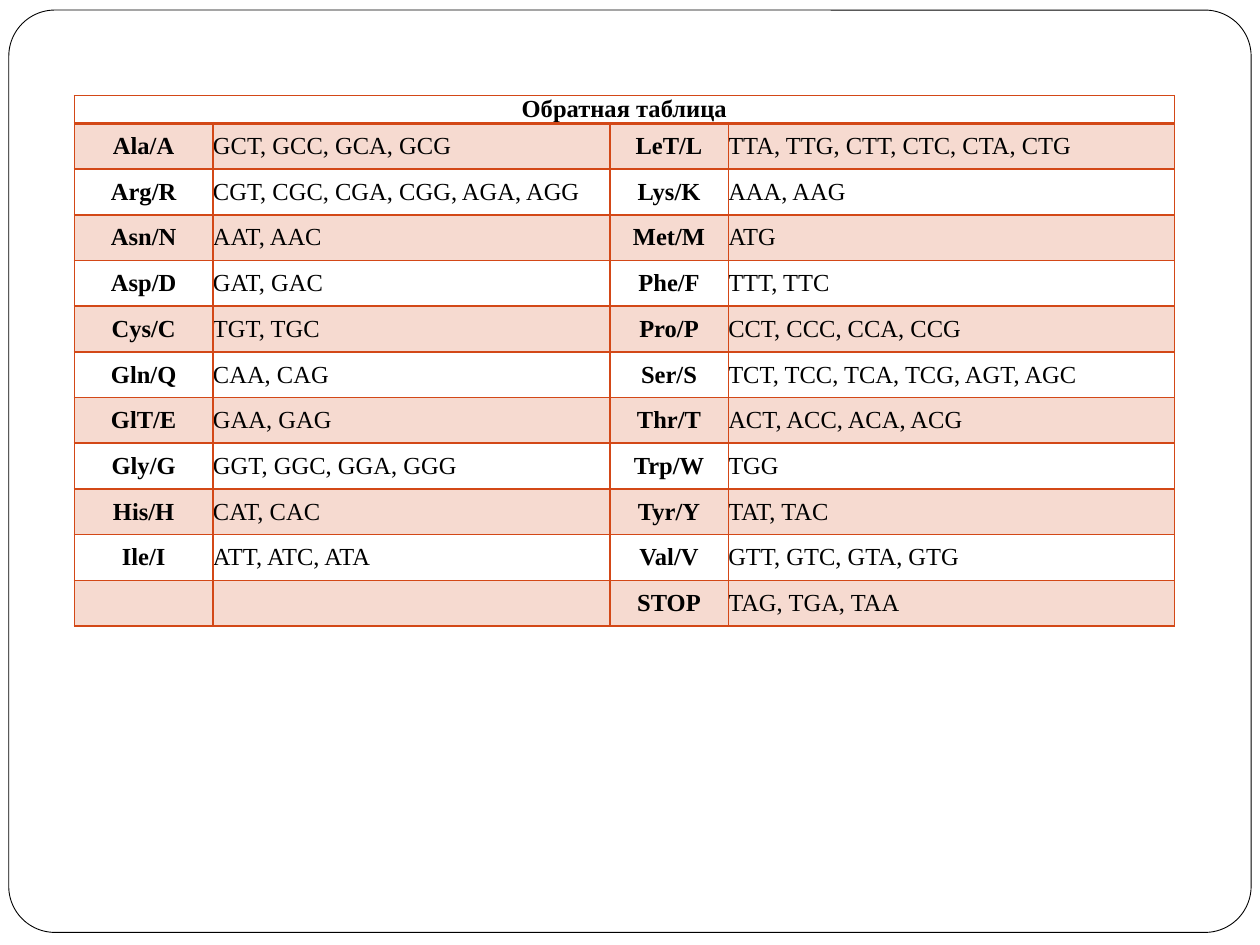
from dataclasses import dataclass

import pptx
import pptx.dml.color
import pptx.enum.shapes
import pptx.enum.text
import pptx.oxml
import pptx.oxml.ns
import pptx.util
from pptx.util import Inches, Pt

COLORS = {"paper": "FFFFFF", "ink": "000000", "accent": "D34817"}
FONT = "Times New Roman"
BAND_OPACITY = 20
COLUMN_WIDTHS = (1.1, 3.15, 0.94, 3.54)
TABLE_LEFT, TABLE_TOP = 0.59, 0.76
HEADER_HEIGHT, BODY_HEIGHT = 0.22, 3.99
TITLE = "Обратная таблица"


@dataclass(frozen=True)
class AminoAcid:
    name: str
    codons: str


LEFT_ACIDS = (
    AminoAcid("Ala/A", "GCT, GCC, GCA, GCG"),
    AminoAcid("Arg/R", "CGT, CGC, CGA, CGG, AGA, AGG"),
    AminoAcid("Asn/N", "AAT, AAC"),
    AminoAcid("Asp/D", "GAT, GAC"),
    AminoAcid("Cys/C", "TGT, TGC"),
    AminoAcid("Gln/Q", "CAA, CAG"),
    AminoAcid("GlT/E", "GAA, GAG"),
    AminoAcid("Gly/G", "GGT, GGC, GGA, GGG"),
    AminoAcid("His/H", "CAT, CAC"),
    AminoAcid("Ile/I", "ATT, ATC, ATA"),
    AminoAcid("", ""),
)
RIGHT_ACIDS = (
    AminoAcid("LeT/L", "TTA, TTG, CTT, CTC, CTA, CTG"),
    AminoAcid("Lys/K", "AAA, AAG"),
    AminoAcid("Met/M", "ATG"),
    AminoAcid("Phe/F", "TTT, TTC"),
    AminoAcid("Pro/P", "CCT, CCC, CCA, CCG"),
    AminoAcid("Ser/S", "TCT, TCC, TCA, TCG, AGT, AGC"),
    AminoAcid("Thr/T", "ACT, ACC, ACA, ACG"),
    AminoAcid("Trp/W", "TGG"),
    AminoAcid("Tyr/Y", "TAT, TAC"),
    AminoAcid("Val/V", "GTT, GTC, GTA, GTG"),
    AminoAcid("STOP", "TAG, TGA, TAA"),
)


def color(name: str) -> pptx.dml.color.RGBColor:
    return pptx.dml.color.RGBColor.from_string(COLORS[name])


def draw_frame(slide) -> None:
    shape = slide.shapes.add_shape(
        pptx.enum.shapes.MSO_SHAPE.ROUNDED_RECTANGLE,
        Inches(0.07), Inches(0.08), Inches(9.86), Inches(7.32),
    )
    shape.adjustments[0] = 0.05
    shape.shadow.inherit = False
    shape.fill.solid()
    shape.fill.fore_color.rgb = color("paper")
    shape.line.color.rgb = color("ink")
    shape.line.width = Pt(0.5)


def set_borders(cell, top: float = 1, bottom: float = 1) -> None:
    properties = cell._tc.get_or_add_tcPr()
    for side, width in (("L", 1), ("R", 1), ("T", top), ("B", bottom)):
        properties.append(pptx.oxml.parse_xml(
            f'<a:ln{side} {pptx.oxml.ns.nsdecls("a")} w="{Pt(width)}"><a:solidFill>'
            f'<a:srgbClr val="{COLORS["accent"]}"/></a:solidFill></a:ln{side}>'
        ))


def set_fill(cell, banded: bool) -> None:
    if not banded:
        cell.fill.background()
        return
    cell.fill.solid()
    cell.fill.fore_color.rgb = color("accent")
    tint = cell._tc.tcPr.find(".//" + pptx.oxml.ns.qn("a:solidFill") + "[last()]/")
    fill = cell._tc.tcPr.find(pptx.oxml.ns.qn("a:solidFill"))
    tint = fill.find(pptx.oxml.ns.qn("a:srgbClr"))
    tint.append(pptx.oxml.parse_xml(
        f'<a:alpha {pptx.oxml.ns.nsdecls("a")} val="{BAND_OPACITY * 1000}"/>'
    ))


def write_cell(cell, text: str, label: bool) -> None:
    cell.margin_left = cell.margin_right = cell.margin_top = cell.margin_bottom = 0
    cell.vertical_anchor = pptx.enum.text.MSO_ANCHOR.MIDDLE
    cell.text_frame.text = text
    paragraph = cell.text_frame.paragraphs[0]
    alignment = pptx.enum.text.PP_ALIGN
    paragraph.alignment = alignment.CENTER if label else alignment.LEFT
    for font in (paragraph.font, *(run.font for run in paragraph.runs)):
        font.name = FONT
        font.size = Pt(14)
        font.bold = label
        font.color.rgb = color("ink")


def draw_codon_table(slide) -> None:
    row_count = len(LEFT_ACIDS)
    table = slide.shapes.add_table(
        row_count + 1, len(COLUMN_WIDTHS), Inches(TABLE_LEFT), Inches(TABLE_TOP),
        Inches(sum(COLUMN_WIDTHS)), Inches(HEADER_HEIGHT + BODY_HEIGHT),
    ).table
    for column, width in zip(table.columns, COLUMN_WIDTHS):
        column.width = Inches(width)
    for row in table.rows:
        row.height = Inches(BODY_HEIGHT / row_count)
    table.rows[0].height = Inches(HEADER_HEIGHT)

    header = table.cell(0, 0)
    header.merge(table.cell(0, len(COLUMN_WIDTHS) - 1))
    write_cell(header, TITLE, label=True)
    for cell in table.rows[0].cells:
        set_borders(cell, bottom=2)
        set_fill(cell, banded=False)

    for row, (left, right) in enumerate(zip(LEFT_ACIDS, RIGHT_ACIDS), start=1):
        texts = (left.name, left.codons, right.name, right.codons)
        for column, text in enumerate(texts):
            cell = table.cell(row, column)
            write_cell(cell, text, label=column % 2 == 0)
            set_borders(cell, top=2 if row == 1 else 1)
            set_fill(cell, banded=row % 2 == 1)


def main() -> None:
    presentation = pptx.Presentation()
    presentation.slide_width, presentation.slide_height = Inches(10), Inches(7.5)
    slide = presentation.slides.add_slide(presentation.slide_layouts[6])
    draw_frame(slide)
    draw_codon_table(slide)
    presentation.save("out.pptx")


if __name__ == "__main__":
    main()
